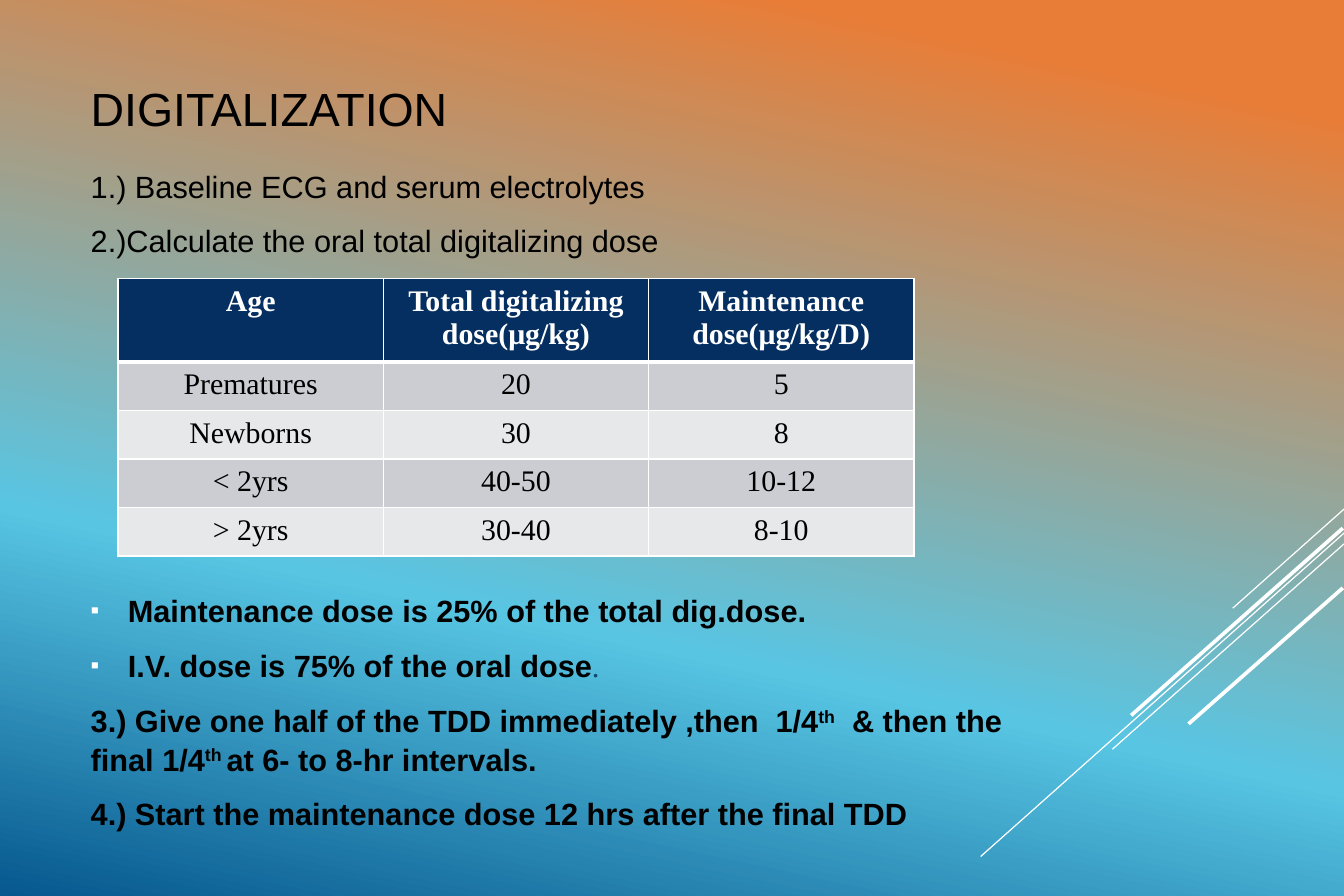
from lxml import etree
from pptx import Presentation
from pptx import util as u
from pptx.dml.color import RGBColor
from pptx.enum import shapes, text
from pptx.oxml import ns

# Content
TITLE = "DIGITALIZATION"
FIRST_STEPS = ["1.) Baseline ECG and serum electrolytes",
               "2.)Calculate the oral total digitalizing dose"]
DOSES = [
    ("Age", "Total digitalizing dose(μg/kg)", "Maintenance dose(μg/kg/D)"),
    ("Prematures", "20", "5"),
    ("Newborns", "30", "8"),
    ("< 2yrs", "40-50", "10-12"),
    ("> 2yrs", "30-40", "8-10"),
]
RULES = ["Maintenance dose is 25% of the total dig.dose.",
         "I.V. dose is 75% of the oral dose"]
# Every second part is superscript
LAST_STEPS = [
    ["3.) Give one half of the TDD immediately ,then  1/4", "th",
     "  & then the final 1/4", "th ", "at 6- to 8-hr intervals."],
    ["4.) Start the maintenance dose 12 hrs after the final TDD"],
]
BACKDROP = [(0, "E87D37"), (10, "E87D37"), (67, "58C5E3"), (100, "06588E")]
# Start x, y, end x, y in cm, then width in points
STRIPES = [
    (28.58, 10.82, 26.21, 12.93, 0.75),
    (28.58, 11.33, 20.85, 18.21, 0.75),
    (28.58, 11.56, 23.65, 15.93, 0.75),
    (28.55, 11.23, 24.05, 15.21, 2.25),
    (28.55, 12.5, 25.27, 15.39, 2.25),
]

# Layout in cm
LEFT, WIDTH = 1.93, 19.96
BULLET_INDENT = 0.79
COLUMN, HEADER_HEIGHT, ROW_HEIGHT = 5.64, 1.67, 1.03
WHITE, BLACK, NAVY = "FFFFFF", "000000", "052F61"
BANDS = ["CCCDD2", "E7E8EA"]


def color(value):
    return RGBColor.from_string(value)


def add_xml(parent, tag, **attributes):
    return etree.SubElement(parent, ns.qn(tag), attributes)


def write(paragraph, words, size=18.5, font="Arial", fill=BLACK, bold=False,
          raised=False):
    run = paragraph.add_run()
    run.text = words
    run.font.size = u.Pt(size)
    run.font.name = font
    run.font.bold = bold
    run.font.color.rgb = color(fill)
    if raised:
        run.font._element.set("baseline", "30000")


def add_box(top, height, anchor=text.MSO_ANCHOR.TOP):
    frame = slide.shapes.add_textbox(
        u.Cm(LEFT), u.Cm(top), u.Cm(WIDTH), u.Cm(height)).text_frame
    frame.word_wrap = True
    frame.vertical_anchor = anchor
    frame.margin_left = frame.margin_right = 0
    frame.margin_top = frame.margin_bottom = 0
    return frame


def add_line(frame):
    last = frame.paragraphs[-1]
    paragraph = frame.add_paragraph() if last.runs else last
    paragraph.line_spacing = 1.05
    paragraph.space_after = u.Pt(9.7)
    return paragraph


def add_bullet(paragraph):
    indent = int(u.Cm(BULLET_INDENT))
    properties = paragraph._p.get_or_add_pPr()
    properties.set("marL", str(indent))
    properties.set("indent", str(-indent))
    add_xml(add_xml(properties, "a:buClr"), "a:srgbClr", val=WHITE)
    add_xml(properties, "a:buSzPct", val="80000")
    add_xml(properties, "a:buFont", typeface="Arial")
    add_xml(properties, "a:buChar", char="▪")


def add_borders(cell, widths):
    properties = cell._tc.get_or_add_tcPr()
    for side, width in zip("LRTB", widths):
        edge = add_xml(properties, f"a:ln{side}", w=str(int(u.Pt(width))))
        add_xml(add_xml(edge, "a:solidFill"), "a:srgbClr", val=WHITE)


deck = Presentation()
deck.slide_width, deck.slide_height = u.Inches(11.25), u.Inches(7.5)
slide = deck.slides.add_slide(deck.slide_layouts[6])

# Background gradient
backdrop = slide.background.fill
backdrop.gradient()
backdrop.gradient_angle = 258
stops = next(slide.element.iter(ns.qn("a:gsLst")))
for stop in list(stops):
    stops.remove(stop)
for position, shade in BACKDROP:
    stop = add_xml(stops, "a:gs", pos=str(position * 1000))
    add_xml(stop, "a:srgbClr", val=shade)

# Diagonal stripes
for *ends, width in STRIPES:
    stripe = slide.shapes.add_connector(
        shapes.MSO_CONNECTOR.STRAIGHT, *map(u.Cm, ends))
    stripe.line.color.rgb = color(WHITE)
    stripe.line.width = u.Pt(width)
    add_xml(stripe.element.spPr, "a:effectLst")

# Title and first steps
write(add_box(0.89, 2.82, text.MSO_ANCHOR.MIDDLE).paragraphs[0], TITLE, size=28)
steps = add_box(3.52, 2.2)
for step in FIRST_STEPS:
    write(add_line(steps), step)

# Dose table
rows, columns = len(DOSES), len(DOSES[0])
doses = slide.shapes.add_table(
    rows, columns, u.Cm(2.51), u.Cm(5.92), u.Cm(COLUMN * columns),
    u.Cm(HEADER_HEIGHT + ROW_HEIGHT * (rows - 1))).table
for column in doses.columns:
    column.width = u.Cm(COLUMN)
for r, entries in enumerate(DOSES):
    header = r == 0
    doses.rows[r].height = u.Cm(HEADER_HEIGHT if header else ROW_HEIGHT)
    for c, entry in enumerate(entries):
        cell = doses.cell(r, c)
        add_borders(cell, (1, 1, 3 if r == 1 else 1, 3 if header else 1))
        cell.fill.solid()
        cell.fill.fore_color.rgb = color(NAVY if header else BANDS[(r - 1) % 2])
        paragraph = cell.text_frame.paragraphs[0]
        paragraph.alignment = text.PP_ALIGN.CENTER
        write(paragraph, entry, size=18, font="Times New Roman",
              fill=WHITE if header else BLACK, bold=header)

# Dose rules and last steps
notes = add_box(12.55, 5.6)
for rule in RULES:
    line = add_line(notes)
    add_bullet(line)
    write(line, rule, bold=True)
write(line, ".", font="Times New Roman", fill="0F496F")
for parts in LAST_STEPS:
    line = add_line(notes)
    for i, part in enumerate(parts):
        write(line, part, bold=True, raised=i % 2 == 1)

deck.save("out.pptx")
